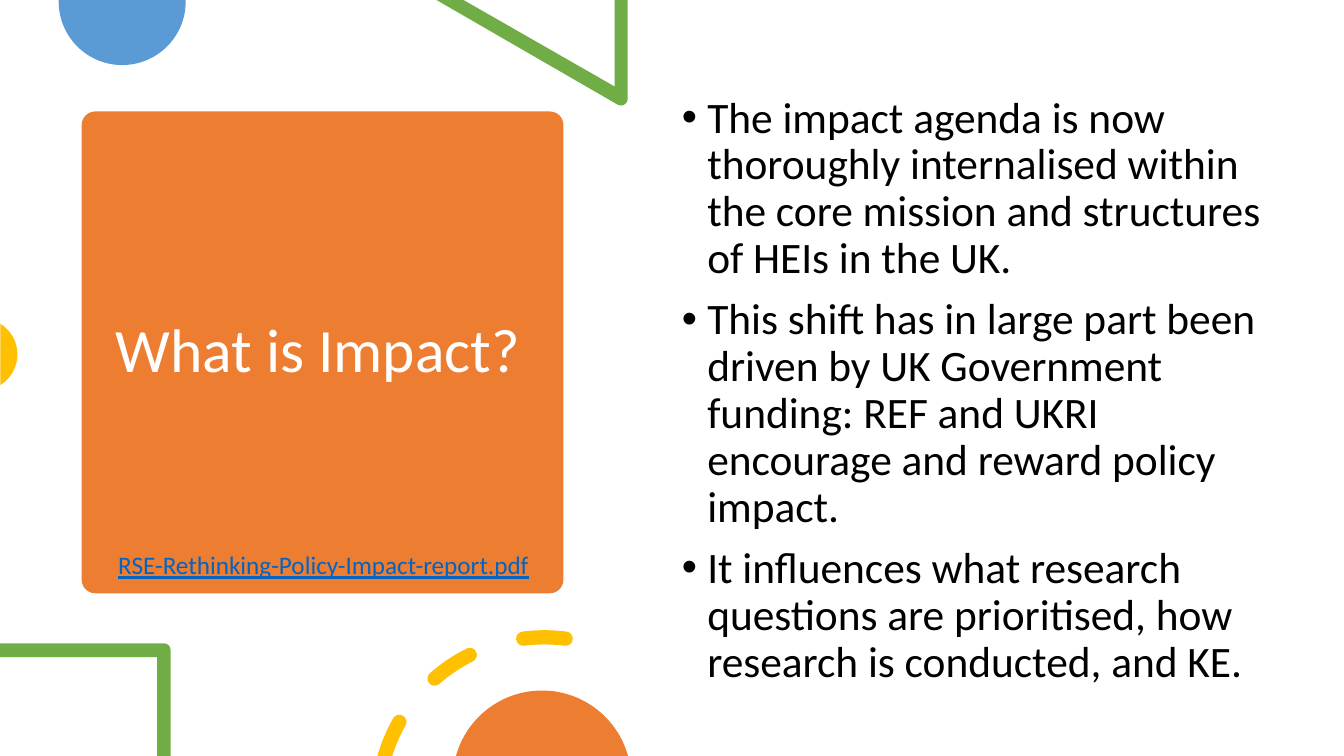
from math import ceil, cos, radians, sin, tan

from lxml import etree
from pptx import Presentation
from pptx.dml.color import RGBColor
from pptx.enum.shapes import MSO_SHAPE
from pptx.enum.text import MSO_ANCHOR, MSO_AUTO_SIZE, PP_ALIGN
from pptx.oxml.ns import qn
from pptx.util import Cm, Pt

LEFT = PP_ALIGN.LEFT
TOP, MIDDLE = MSO_ANCHOR.TOP, MSO_ANCHOR.MIDDLE
NO_FIT, GROW = MSO_AUTO_SIZE.NONE, MSO_AUTO_SIZE.SHAPE_TO_FIT_TEXT
ROUNDED = MSO_SHAPE.ROUNDED_RECTANGLE

ORANGE = RGBColor(0xED, 0x7D, 0x31)
BLUE = RGBColor(0x5B, 0x9B, 0xD5)
GREEN = RGBColor(0x70, 0xAD, 0x47)
YELLOW = RGBColor(0xFF, 0xC0, 0x00)
LINK = RGBColor(0x05, 0x63, 0xC1)
WHITE = RGBColor(0xFF, 0xFF, 0xFF)
BLACK = RGBColor(0x00, 0x00, 0x00)

FONT = "Calibri"
WIDTH, HEIGHT = 33.87, 19.05
CORNER = 0.17
POINTS = [
    "The impact agenda is now thoroughly internalised within the core mission "
    "and structures of HEIs in the UK.",
    "This shift has in large part been driven by UK Government funding: REF and "
    "UKRI encourage and reward policy impact.",
    "It influences what research questions are prioritised, how research is "
    "conducted, and KE.",
]


def lines(*points):
    return [[point] for point in points]


def arc(cx, cy, r, start, end):
    """Start point, then Bezier steps; degrees run clockwise from the right."""
    count = ceil(abs(end - start) / 90)
    sweep = radians(end - start) / count
    pull = 4 / 3 * tan(sweep / 4)

    def on_circle(a, offset=0):
        return (cx + r * (cos(a) - offset * sin(a)),
                cy + r * (sin(a) + offset * cos(a)))

    angles = [radians(start) + sweep * i for i in range(count + 1)]
    curves = [[on_circle(a, pull), on_circle(b, -pull), on_circle(b)]
              for a, b in zip(angles, angles[1:])]
    return [[on_circle(angles[0])]] + curves


def ring_dash(cx, cy, r, half, outer_start, inner_start, end):
    """Stroke on a ring; its start is round unless the two starts differ."""
    def cap(angle, turn):
        a = radians(angle)
        return arc(cx + r * cos(a), cy + r * sin(a), half,
                   angle + turn, angle + turn + 180)[1:]

    outline = (arc(cx, cy, r + half, outer_start, end) + cap(end, 0)
               + arc(cx, cy, r - half, end, inner_start)[1:])
    return outline + (cap(outer_start, 180) if outer_start == inner_start else [])


def paint(sp, color):
    sp.shadow.inherit = False
    sp.fill.solid()
    sp.fill.fore_color.rgb = color
    sp.line.fill.background()


def bend(sp, steps):
    """Turn the straight steps that carry control points into curves."""
    segments = list(sp._element.iter(qn("a:lnTo")))
    for segment, step in zip(segments, steps):
        if len(step) == 3:
            segment.tag = qn("a:cubicBezTo")
            for i, (x, y) in enumerate(step[:2]):
                pt = etree.Element(qn("a:pt"))
                pt.set("x", str(Cm(x) - sp.left))
                pt.set("y", str(Cm(y) - sp.top))
                segment.insert(i, pt)


def add_outline(slide, color, *contours):
    builder = None
    for contour in contours:
        first, *rest = [(Cm(step[-1][0]), Cm(step[-1][1])) for step in contour]
        if builder is None:
            builder = slide.shapes.build_freeform(*first)
        else:
            builder.move_to(*first)
        builder.add_line_segments(rest, close=False)
        builder.add_line_segments([], close=True)
    sp = builder.convert_to_shape()
    paint(sp, color)
    # Closing adds no lnTo when the outline already ends at its start.
    steps = []
    for contour in contours:
        steps += contour[1:]
    bend(sp, steps)


def place(sp, left, top, width, height):
    sp.left, sp.top, sp.width, sp.height = Cm(left), Cm(top), Cm(width), Cm(height)


def format_text(p, size, color):
    p.alignment = LEFT
    for r in p.runs:
        r.font.name = FONT
        r.font.size = Pt(size)
        r.font.color.rgb = color


def add_card(slide):
    sp = slide.shapes.add_shape(ROUNDED, Cm(2.06), Cm(2.81), Cm(12.14), Cm(12.14))
    sp.adjustments[0] = 0.028
    paint(sp, ORANGE)
    slide.shapes._spTree.insert(2, sp._element)


def fill_title(title):
    place(title, 2.66, 3.1, 10.95, 11.58)
    tf = title.text_frame
    tf.text = "What is Impact?"
    tf.vertical_anchor = MIDDLE
    tf.auto_size = NO_FIT
    tf.paragraphs[0].line_spacing = 0.9
    format_text(tf.paragraphs[0], 44, WHITE)


def fill_body(body):
    place(body, 16.93, 2.28, 15.19, 16.76)
    tf = body.text_frame
    tf.text = "\n".join(POINTS)
    tf.vertical_anchor = TOP
    tf.auto_size = NO_FIT
    for i, p in enumerate(tf.paragraphs):
        pPr = p._p.get_or_add_pPr()
        pPr.set("marL", str(Cm(0.64)))
        pPr.set("indent", str(-Cm(0.64)))
        etree.SubElement(pPr, qn("a:buFont")).set("typeface", "Arial")
        etree.SubElement(pPr, qn("a:buChar")).set("char", "•")
        p.line_spacing = 0.9
        p.space_before = Pt(10 if i else 0)
        format_text(p, 31, BLACK)


def add_source(slide):
    sp = slide.shapes.add_textbox(Cm(2.73), Cm(13.72), Cm(16.94), Cm(1.02))
    tf = sp.text_frame
    tf.word_wrap = True
    tf.auto_size = GROW
    tf.text = "RSE-Rethinking-Policy-Impact-report.pdf"
    format_text(tf.paragraphs[0], 18, LINK)
    tf.paragraphs[0].runs[0].font.underline = True


def add_decorations(slide):
    add_outline(slide, BLUE,
                lines((4.68, 0), (1.48, 0)) + arc(3.08, 0.04, 1.6, 180, 0))
    add_outline(slide, GREEN,
                lines((15.82, 0), (15.49, 0), (15.49, 2.18), (11.68, 0), (11, 0))
                + arc(15.65, 2.49, CORNER, 120, 90)
                + arc(15.65, 2.49, CORNER, 90, 0)[1:])
    add_outline(slide, YELLOW, arc(-0.47, 8.93, 0.91, -58, 58))
    add_outline(slide, GREEN,
                lines((0, 16.21), (0, 16.56), (3.96, 16.56),
                      (3.96, HEIGHT), (4.3, HEIGHT))
                + arc(4.13, 16.38, CORNER, 0, -90))
    dashes = [(196.04, 197.52, 209.5), (228.8, 228.8, 243.4), (262.7, 262.7, 277.3)]
    add_outline(slide, YELLOW,
                *[ring_dash(13.72, 20.26, 4.2, 0.18, *angles) for angles in dashes])
    add_outline(slide, ORANGE, arc(13.66, 19.65, 2.25, 195.5, 344.5))


def main():
    prs = Presentation()
    prs.slide_width, prs.slide_height = Cm(WIDTH), Cm(HEIGHT)
    slide = prs.slides.add_slide(prs.slide_layouts[1])
    add_card(slide)
    fill_title(slide.shapes.title)
    fill_body(slide.placeholders[1])
    add_decorations(slide)
    add_source(slide)
    prs.save("out.pptx")


if __name__ == "__main__":
    main()
